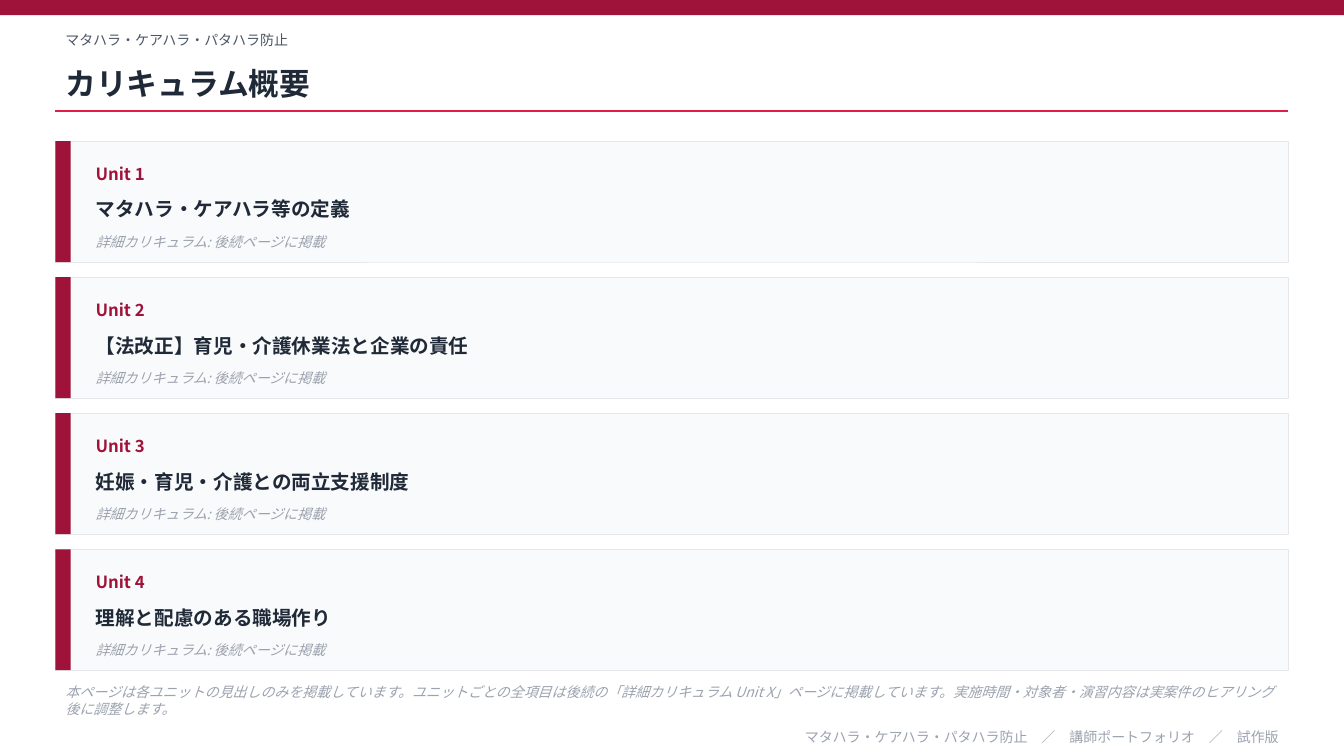
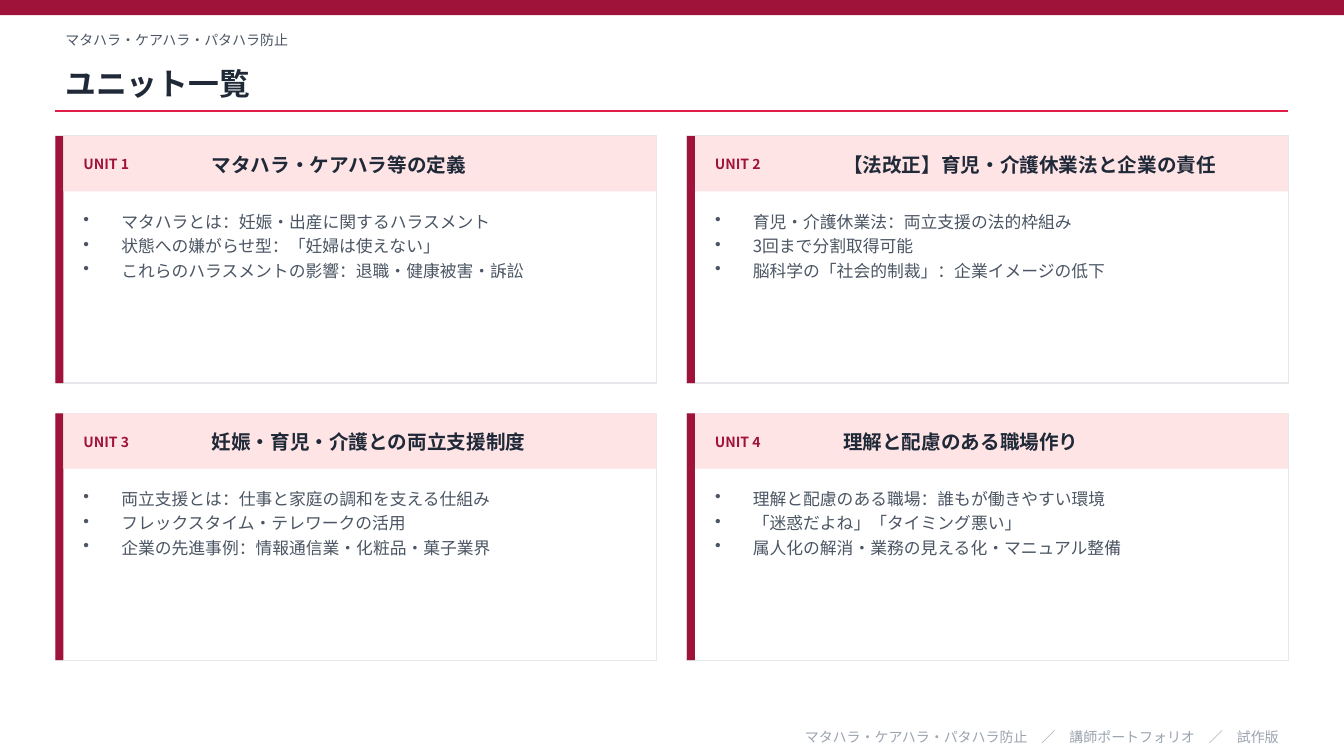
from lxml import etree
from pptx import Presentation
from pptx.dml.color import RGBColor
from pptx.enum.shapes import MSO_CONNECTOR, MSO_SHAPE
from pptx.enum.text import MSO_ANCHOR, PP_ALIGN
from pptx.oxml.ns import qn
from pptx.util import Pt

RECT = MSO_SHAPE.RECTANGLE
LINE = MSO_CONNECTOR.STRAIGHT
MID, TOP = MSO_ANCHOR.MIDDLE, MSO_ANCHOR.TOP
LEFT, RIGHT = PP_ALIGN.LEFT, PP_ALIGN.RIGHT

HUE = {
    "wine": "9F1239", "rose": "E11D48", "pink": "FFE4E6", "ink": "1F2937",
    "slate": "4B5563", "mute": "9CA3AF", "edge": "E5E7EB", "pale": "F9FAFB",
    "white": "FFFFFF",
}
FONT = "Noto Sans CJK JP"
WIDE, HIGH = 960, 540
SIDE, SPAN = 39.6, 880.6
TOPIC = "マタハラ・ケアハラ・パタハラ防止"
FOOT = TOPIC + "　／　講師ポートフォリオ　／　試作版"
HINT = "詳細カリキュラム: 後続ページに掲載"
NOTE = (
    "本ページは各ユニットの見出しのみを掲載しています。"
    "ユニットごとの全項目は後続の「詳細カリキュラム Unit X」ページに掲載しています。"
    "実施時間・対象者・演習内容は実案件のヒアリング後に調整します。"
)
UNITS = [
    ("マタハラ・ケアハラ等の定義", [
        "マタハラとは：妊娠・出産に関するハラスメント",
        "状態への嫌がらせ型：「妊婦は使えない」",
        "これらのハラスメントの影響：退職・健康被害・訴訟",
    ]),
    ("【法改正】育児・介護休業法と企業の責任", [
        "育児・介護休業法：両立支援の法的枠組み",
        "3回まで分割取得可能",
        "脳科学の「社会的制裁」：企業イメージの低下",
    ]),
    ("妊娠・育児・介護との両立支援制度", [
        "両立支援とは：仕事と家庭の調和を支える仕組み",
        "フレックスタイム・テレワークの活用",
        "企業の先進事例：情報通信業・化粧品・菓子業界",
    ]),
    ("理解と配慮のある職場作り", [
        "理解と配慮のある職場：誰もが働きやすい環境",
        "「迷惑だよね」「タイミング悪い」",
        "属人化の解消・業務の見える化・マニュアル整備",
    ]),
]


def tint(name):
    return RGBColor.from_string(HUE[name])


def block(slide, x, y, w, h, fill, edge=0):
    shape = slide.shapes.add_shape(RECT, Pt(x), Pt(y), Pt(w), Pt(h))
    shape.shadow.inherit = False
    shape.fill.solid()
    shape.fill.fore_color.rgb = tint(fill)
    if edge:
        shape.line.color.rgb = tint("edge")
        shape.line.width = Pt(edge)
    else:
        shape.line.fill.background()


def write(slide, x, y, w, h, lines, size, hue, bold=None, slant=None,
          align=LEFT, anchor=MID, dots=False):
    frame = slide.shapes.add_textbox(Pt(x), Pt(y), Pt(w), Pt(h)).text_frame
    frame.word_wrap = True
    frame.vertical_anchor = anchor
    for i, line in enumerate(lines):
        para = frame.add_paragraph() if i else frame.paragraphs[0]
        para.alignment = align
        if dots:
            para.space_after = Pt(3)
            props = para._p.get_or_add_pPr()
            props.set("marL", str(Pt(27)))
            props.set("indent", str(-Pt(27)))
            etree.SubElement(props, qn("a:buChar")).set("char", "•")
        run = para.add_run()
        run.text = line
        font = run.font
        font.name, font.size = FONT, Pt(size)
        font.bold, font.italic = bold, slant
        font.color.rgb = tint(hue)


def rule(slide, x, y, w):
    line = slide.shapes.add_connector(LINE, Pt(x), Pt(y), Pt(x + w), Pt(y))
    line.line.color.rgb = tint("rose")
    line.line.width = Pt(1)
    etree.SubElement(line._element.spPr, qn("a:effectLst"))


def base(deck, title):
    slide = deck.slides.add_slide(deck.slide_layouts[6])
    slide.background.fill.solid()
    slide.background.fill.fore_color.rgb = tint("white")
    block(slide, 0, 0, WIDE, 10.8, "wine")
    write(slide, SIDE, 18, SPAN, 21.6, [TOPIC], 10, "slate")
    write(slide, SIDE, 39.6, SPAN, 39.6, [title], 22, "ink", bold=True)
    rule(slide, SIDE, 79.2, SPAN)
    write(slide, SIDE, 518.4, SPAN, 15.84, [FOOT], 10, "mute", align=RIGHT)
    return slide


def row(slide, x, y, w, h, num, name):
    block(slide, x, y, w, h, "pale", 0.5)
    block(slide, x, y, 10.8, h, "wine")
    left, wide = x + 21.6, w - 36
    write(slide, left, y + 8.64, 108, 28.8, [f"Unit {num}"], 12, "wine", bold=True)
    write(slide, left, y + 32.4, wide, 32.4, [name], 14, "ink", bold=True)
    write(slide, left, y + 61.2, wide, 21.6, [HINT], 10, "mute", slant=True)


def card(slide, x, y, w, h, num, name, items):
    bar, head = 5.76, 39.6
    block(slide, x, y, w, h, "white", 1)
    block(slide, x, y, bar, h, "wine")
    block(slide, x + bar, y, w - bar, head, "pink")
    left = x + 12.96
    write(slide, left, y + 5.76, 86.4, 28.8, [f"UNIT {num}"], 10, "wine", bold=True)
    write(slide, x + 104.4, y + 5.76, w - 115.2, 28.8, [name], 14, "ink", bold=True)
    write(slide, left, y + 50.4, w - 25.92, h - 61.2, items, 12, "slate",
          anchor=TOP, dots=True)


def outline(deck):
    slide = base(deck, "カリキュラム概要")
    high, gap = 86.4, 10.8
    for i, (name, _) in enumerate(UNITS):
        row(slide, SIDE, 100.8 + i * (high + gap), SPAN, high, i + 1, name)
    write(slide, SIDE, 486, SPAN, 28.8, [NOTE], 10, "mute", slant=True)


def listing(deck):
    slide = base(deck, "ユニット一覧")
    gap, high = 21.6, 176.4
    wide = (SPAN - gap) / 2
    for i, (name, items) in enumerate(UNITS):
        down, over = divmod(i, 2)
        card(slide, SIDE + over * (wide + gap), 97.2 + down * (high + gap),
             wide, high, i + 1, name, items)


def main():
    deck = Presentation()
    deck.slide_width, deck.slide_height = Pt(WIDE), Pt(HIGH)
    outline(deck)
    listing(deck)
    deck.save("out.pptx")


if __name__ == "__main__":
    main()
